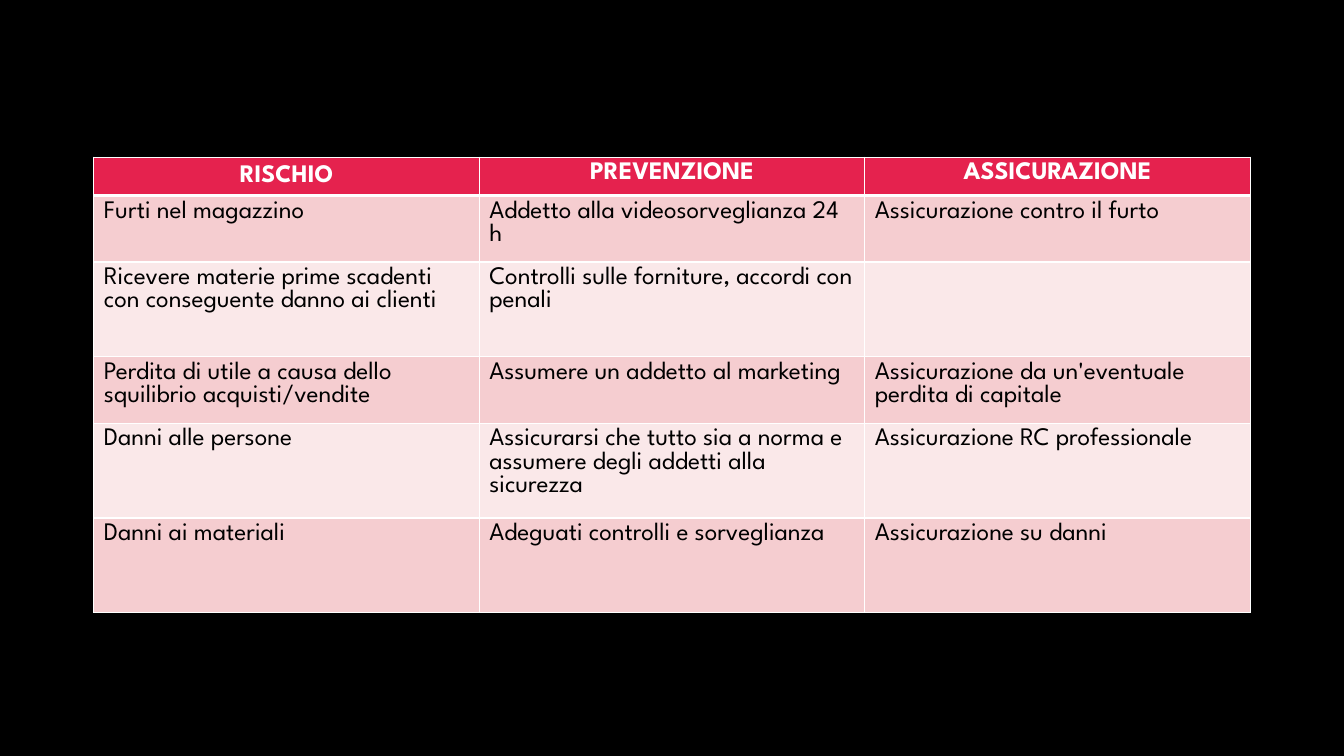
from lxml import etree
from pptx import Presentation
from pptx.dml.color import RGBColor
from pptx.enum.text import MSO_ANCHOR, PP_ALIGN
from pptx.oxml.ns import qn
from pptx.util import Inches, Pt

CENTER, LEFT = PP_ALIGN.CENTER, PP_ALIGN.LEFT
TOP, MIDDLE = MSO_ANCHOR.TOP, MSO_ANCHOR.MIDDLE
BLANK_LAYOUT = 6
FONT = "League Spartan"
COLORS = {
    "background": "000000",
    "header": "E5224E",
    "odd_row": "F5CDD0",
    "even_row": "FAE8E9",
    "border": "FFFFFF",
    "header_text": "FFFFFF",
    "body_text": "000000",
}
HEADERS = ["RISCHIO", "PREVENZIONE", "ASSICURAZIONE"]
RISKS = [
    ["Furti nel magazzino", "Addetto alla videosorveglianza 24 h",
     "Assicurazione contro il furto"],
    ["Ricevere materie prime scadenti con conseguente danno ai clienti",
     "Controlli sulle forniture, accordi con penali", ""],
    ["Perdita di utile a causa dello squilibrio acquisti/vendite",
     "Assumere un addetto al marketing",
     "Assicurazione da un'eventuale perdita di capitale"],
    ["Danni alle persone",
     "Assicurarsi che tutto sia a norma e assumere degli addetti alla sicurezza",
     "Assicurazione RC professionale"],
    ["Danni ai materiali", "Adeguati controlli e sorveglianza",
     "Assicurazione su danni"],
]
ROW_HEIGHTS = [0.38, 0.66, 0.94, 0.66, 0.94, 0.94]
TABLE_LEFT, TABLE_TOP, TABLE_WIDTH = 0.93, 1.56, 11.47


def color(name):
    return RGBColor.from_string(COLORS[name])


def write_text(text_frame, text, size=18, color_name="body_text", bold=False,
               alignment=LEFT):
    paragraph = text_frame.paragraphs[0]
    paragraph.alignment = alignment
    font = paragraph.font
    if text:
        run = paragraph.add_run()
        run.text = text
        font = run.font
    font.name = FONT
    font.size = Pt(size)
    font.bold = bold
    font.color.rgb = color(color_name)


def set_borders(cell, top=1, bottom=1):
    properties = cell._tc.get_or_add_tcPr()
    for side, width in (("L", 1), ("R", 1), ("T", top), ("B", bottom)):
        line = etree.SubElement(properties, qn(f"a:ln{side}"), w=str(Pt(width)))
        fill = etree.SubElement(line, qn("a:solidFill"))
        etree.SubElement(fill, qn("a:srgbClr"), val=COLORS["border"])


def fill_cell(cell, color_name):
    cell.fill.solid()
    cell.fill.fore_color.rgb = color(color_name)


def add_risk_table(slide):
    rows = [HEADERS] + RISKS
    table = slide.shapes.add_table(
        len(rows), len(HEADERS), Inches(TABLE_LEFT), Inches(TABLE_TOP),
        Inches(TABLE_WIDTH), Inches(sum(ROW_HEIGHTS))).table
    for row, height in zip(table.rows, ROW_HEIGHTS):
        row.height = Inches(height)
    for row_index, texts in enumerate(rows):
        for column_index, text in enumerate(texts):
            cell = table.cell(row_index, column_index)
            if row_index == 0:
                set_borders(cell, bottom=3)
                fill_cell(cell, "header")
                cell.vertical_anchor = MIDDLE if column_index == 0 else TOP
                write_text(cell.text_frame, text, color_name="header_text",
                           bold=True, alignment=CENTER)
            else:
                set_borders(cell, top=3 if row_index == 1 else 1)
                fill_cell(cell, "odd_row" if row_index % 2 else "even_row")
                write_text(cell.text_frame, text)


def main():
    presentation = Presentation()
    presentation.slide_width = Inches(13.33)
    presentation.slide_height = Inches(7.5)
    slide = presentation.slides.add_slide(presentation.slide_layouts[BLANK_LAYOUT])
    slide.background.fill.solid()
    slide.background.fill.fore_color.rgb = color("background")
    add_risk_table(slide)
    presentation.save("out.pptx")


if __name__ == "__main__":
    main()
